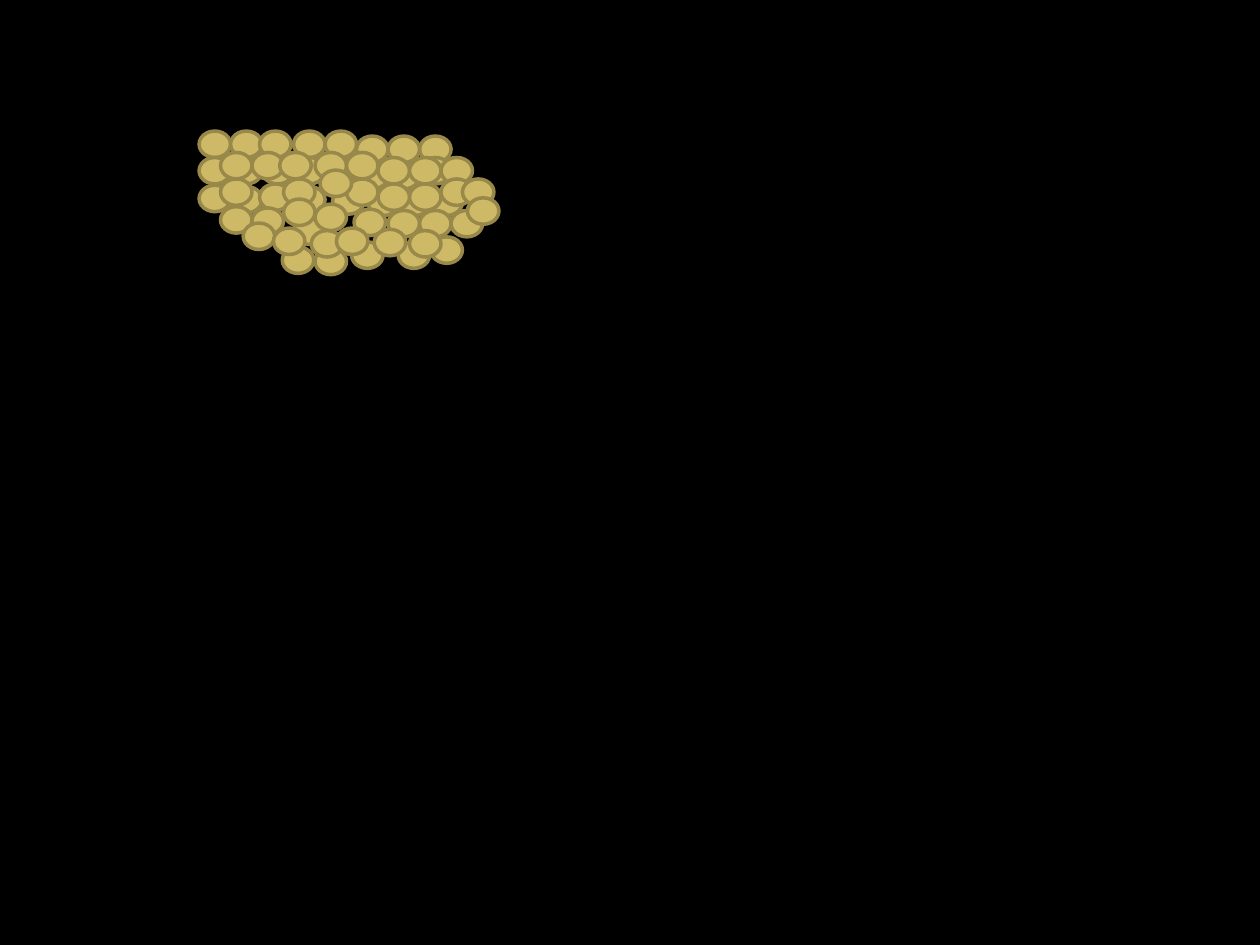
from pptx import Presentation, util as u
from pptx.dml.color import RGBColor
from pptx.enum import shapes

COLUMNS, ROWS = 1000, 750

# Runs of beads from back to front: grid row, then the grid columns.
BEAD_RUNS = [
    (104, [158, 183, 206, 258, 233]),
    (108, [283, 333, 308]),
    (125, [233, 158]),
    (129, [308]), (125, [333]), (129, [283]),
    (125, [258, 208, 183]),
    (148, [183]), (146, [206]), (148, [233]), (149, [264]),
    (150, [292]), (147, [158]), (150, [317, 342]),
    (121, [175, 200, 222, 250]),
    (125, [300, 350, 325]),
    (197, [250]), (142, [175]), (146, [325]), (142, [350]),
    (146, [300]), (142, [275]), (135, [254]), (142, [225]),
    (165, [200]), (173, [233]), (183, [247]), (166, [281]),
    (167, [308]), (164, [175]), (167, [333, 358]),
    (196, [224]), (121, [275]), (177, [193]), (162, [250]),
    (192, [279, 316]),
    (142, [367]), (158, [225]), (188, [342]),
    (181, [217, 267]),
    (182, [297]), (183, [325]), (157, [371]),
]


def color(value):
    """Return the colour for a hex string."""
    return RGBColor.from_string(value)


class BeadSlide:
    """Hold the bead style and the current slide."""

    style = {"background": "000000", "fill": "CEB966", "line": "98894B",
             "line_width": 2, "columns": 25, "rows": 21}

    def __init__(self, presentation):
        """Add a blank slide with a plain background."""
        self.column = presentation.slide_width / COLUMNS
        self.row = presentation.slide_height / ROWS
        self.slide = presentation.slides.add_slide(presentation.slide_layouts[6])
        self.paint(self.slide.background.fill, self.style["background"])

    def paint(self, fill, value):
        """Make a fill solid in one colour."""
        fill.solid()
        fill.fore_color.rgb = color(value)

    def bead(self, column, row):
        """Draw one oval bead with its corner at a grid position."""
        style = self.style
        box = (column * self.column, row * self.row,
               style["columns"] * self.column, style["rows"] * self.row)
        shape = self.slide.shapes.add_shape(
            shapes.MSO_SHAPE.OVAL, *(u.Emu(round(length)) for length in box))
        shape.shadow.inherit = False
        for part, name in {shape.fill: "fill", shape.line.fill: "line"}.items():
            self.paint(part, style[name])
        shape.line.width = u.Pt(style["line_width"])


def main():
    """Build and save the slide."""
    presentation = Presentation()
    size = {"slide_width": u.Inches(10), "slide_height": u.Inches(7.5)}
    for name, value in size.items():
        setattr(presentation, name, value)
    slide = BeadSlide(presentation)
    for row, columns in BEAD_RUNS:
        for column in columns:
            slide.bead(column, row)
    presentation.save("out.pptx")


if __name__ == "__main__":
    main()
